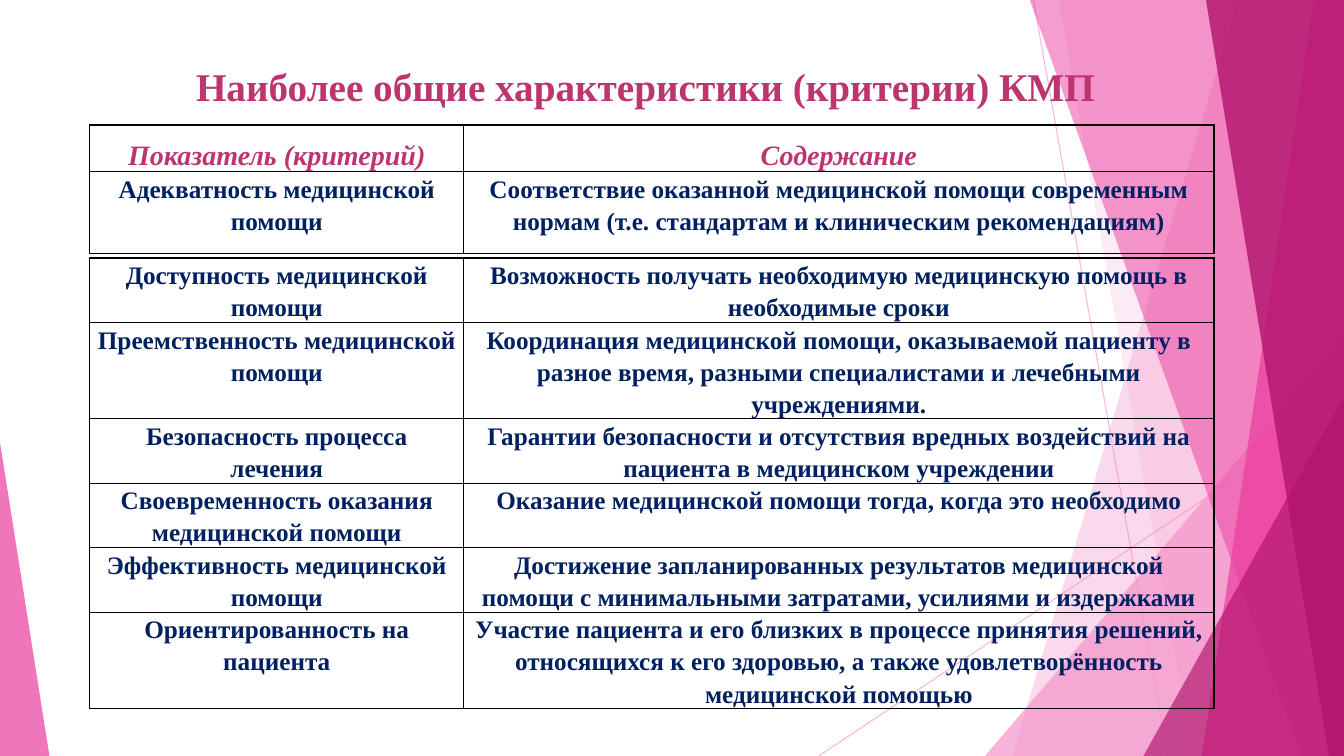
from dataclasses import dataclass
from typing import NamedTuple

from lxml import etree
from pptx import Presentation
from pptx.dml.color import RGBColor
from pptx.enum import shapes, text
from pptx.oxml import ns
from pptx.util import Inches, Pt


@dataclass(frozen=True)
class Theme:
    font: str = "Times New Roman"
    light: str = "F496CB"
    pink: str = "EB3D9F"
    deep: str = "B2136D"
    accent: str = "BC356F"
    navy: str = "002060"
    border: str = "000000"
    title_size: int = 28
    head_size: int = 20
    body_size: int = 18


class Ray(NamedTuple):
    start: tuple[float, float]
    end: tuple[float, float]


class Band(NamedTuple):
    top_x: float
    bottom_x: float
    color: str
    alpha: int


class Corner(NamedTuple):
    left: float
    top: float
    width: float
    apex: float
    color: str
    alpha: int


class Style(NamedTuple):
    size: int
    color: str
    italic: bool
    spacing: float


class Row(NamedTuple):
    height: float
    criterion: str
    content: str
    style: Style


THEME = Theme()
WIDTH, HEIGHT, BLEED = 13.33, 7.5, -0.01
TABLE_LEFT, COLUMNS = 0.89, (3.71, 7.44)
HEAD = Style(THEME.head_size, THEME.accent, True, 1.5)
BODY = Style(THEME.body_size, THEME.navy, False, 1.15)

RAYS = [Ray((10.25, 0), (11.58, HEIGHT)), Ray((WIDTH, 4.03), (8.12, HEIGHT))]
DECOR = [
    Band(12.28, 10.04, THEME.light, 36),
    Band(10.5, 11.83, THEME.light, 20),
    Corner(9.77, 3.33, 3.56, 1, THEME.light, 72),
    Band(10.21, 12.91, THEME.pink, 50),
    Band(13.03, 11.92, THEME.pink, 70),
    Band(11.96, 13.18, THEME.deep, 80),
    Corner(11.34, 3.93, 1.99, 1, THEME.deep, 66),
    Corner(0, 4.39, 0.49, 0, THEME.pink, 70),
]
TABLES = {
    1.24: [
        Row(0.46, "Показатель (критерий)", "Содержание", HEAD),
        Row(0.81, "Адекватность медицинской помощи",
            "Соответствие оказанной медицинской помощи современным нормам "
            "(т.е. стандартам и клиническим рекомендациям)", BODY),
    ],
    2.56: [
        Row(0.64, "Доступность медицинской помощи",
            "Возможность получать необходимую медицинскую помощь в необходимые сроки", BODY),
        Row(0.95, "Преемственность медицинской помощи",
            "Координация медицинской помощи, оказываемой пациенту в разное время, "
            "разными специалистами и лечебными учреждениями.", BODY),
        Row(0.64, "Безопасность процесса лечения",
            "Гарантии безопасности и отсутствия вредных воздействий на пациента "
            "в медицинском учреждении", BODY),
        Row(0.64, "Своевременность оказания медицинской помощи",
            "Оказание медицинской помощи тогда, когда это необходимо", BODY),
        Row(0.64, "Эффективность медицинской помощи",
            "Достижение запланированных результатов медицинской помощи "
            "с минимальными затратами, усилиями и издержками", BODY),
        Row(0.95, "Ориентированность на пациента",
            "Участие пациента и его близких в процессе принятия решений, "
            "относящихся к его здоровью, а также удовлетворённость медицинской помощью", BODY),
    ],
}


def set_alpha(sp, percent: int) -> None:
    color = next(sp._element.spPr.iter(ns.qn("a:srgbClr")))
    etree.SubElement(color, ns.qn("a:alpha"), val=str(percent * 1000))


def add_ray(slide, ray: Ray) -> None:
    line = slide.shapes.add_connector(
        shapes.MSO_CONNECTOR.STRAIGHT, *map(Inches, ray.start + ray.end))
    line.line.color.rgb = RGBColor.from_string(THEME.light)
    line.line.width = Pt(0.75)
    set_alpha(line, 70)
    etree.SubElement(line._element.spPr, ns.qn("a:effectLst"))


def add_decor(slide, item: Band | Corner) -> None:
    if isinstance(item, Band):
        builder = slide.shapes.build_freeform(Inches(item.top_x), Inches(BLEED))
        corners = [(WIDTH, BLEED), (WIDTH, HEIGHT), (item.bottom_x, HEIGHT)]
        builder.add_line_segments([(Inches(x), Inches(y)) for x, y in corners])
        sp = builder.convert_to_shape()
    else:
        sp = slide.shapes.add_shape(
            shapes.MSO_SHAPE.ISOSCELES_TRIANGLE, Inches(item.left), Inches(item.top),
            Inches(item.width), Inches(HEIGHT - item.top))
        sp.adjustments[0] = item.apex
    sp.shadow.inherit = False
    sp.fill.solid()
    sp.fill.fore_color.rgb = RGBColor.from_string(item.color)
    sp.line.fill.background()
    set_alpha(sp, item.alpha)


def write(tf, words: str, style: Style) -> None:
    tf.text = words
    p = tf.paragraphs[0]
    p.alignment = text.PP_ALIGN.CENTER
    p.line_spacing = style.spacing
    font = p.runs[0].font
    font.name = THEME.font
    font.size = Pt(style.size)
    font.bold = True
    font.italic = style.italic
    font.color.rgb = RGBColor.from_string(style.color)


def add_borders(cell) -> None:
    tc_pr = cell._tc.get_or_add_tcPr()
    for index, side in enumerate(("lnL", "lnR", "lnT", "lnB")):
        line = etree.Element(ns.qn(f"a:{side}"), w=str(Pt(1)))
        fill = etree.SubElement(line, ns.qn("a:solidFill"))
        etree.SubElement(fill, ns.qn("a:srgbClr"), val=THEME.border)
        tc_pr.insert(index, line)


def add_criteria(slide, top: float, rows: list[Row]) -> None:
    table = slide.shapes.add_table(
        len(rows), len(COLUMNS), Inches(TABLE_LEFT), Inches(top),
        Inches(sum(COLUMNS)), Inches(sum(row.height for row in rows))).table
    table.first_row = table.horz_banding = False
    for column, width in zip(table.columns, COLUMNS):
        column.width = Inches(width)
    for index, row in enumerate(rows):
        table.rows[index].height = Inches(row.height)
        for cell, words in zip(table.rows[index].cells, (row.criterion, row.content)):
            cell.margin_left = cell.margin_right = Inches(0.07)
            cell.margin_top = cell.margin_bottom = 0
            cell.fill.background()
            add_borders(cell)
            write(cell.text_frame, words, row.style)


def add_title(slide, words: str) -> None:
    box = slide.shapes.add_textbox(Inches(1.29), Inches(0.57), Inches(10.32), Inches(0.57))
    box.text_frame.word_wrap = True
    write(box.text_frame, words, Style(THEME.title_size, THEME.accent, False, 1.0))


def main() -> None:
    prs = Presentation()
    prs.slide_width, prs.slide_height = Inches(WIDTH), Inches(HEIGHT)
    slide = prs.slides.add_slide(prs.slide_layouts[6])
    for ray in RAYS:
        add_ray(slide, ray)
    for item in DECOR:
        add_decor(slide, item)
    for top, rows in TABLES.items():
        add_criteria(slide, top, rows)
    add_title(slide, "Наиболее общие характеристики (критерии) КМП ")
    prs.save("out.pptx")


if __name__ == "__main__":
    main()
